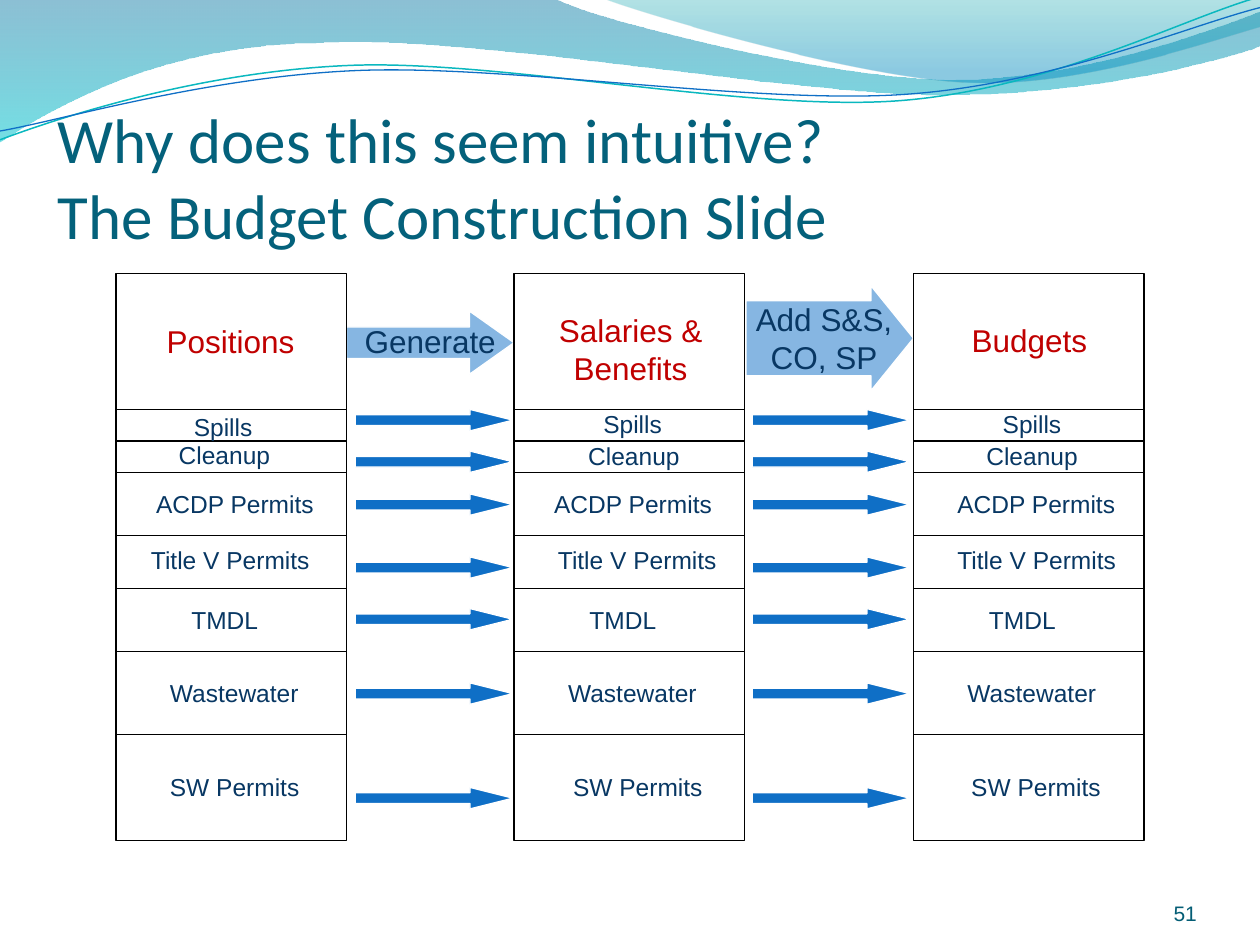
import math

import lxml.etree
import pptx
import pptx.dml.color
import pptx.enum.shapes
import pptx.enum.text
import pptx.oxml.ns
import pptx.util

Inches = pptx.util.Inches
RGBColor = pptx.dml.color.RGBColor
Shape = pptx.enum.shapes.MSO_SHAPE
Align = pptx.enum.text.PP_ALIGN
Anchor = pptx.enum.text.MSO_ANCHOR
AutoSize = pptx.enum.text.MSO_AUTO_SIZE
qn = pptx.oxml.ns.qn

COLORS = {
    "title": "04617B", "number": "045D75", "heading": "C00000", "label": "083763",
    "arrow": "0F6FC6", "border": "000000", "white": "FFFFFF",
    "wave_top": "0074A1", "wave_bottom": "00C6CF",
    "crest_top": "00A1A9", "crest_bottom": "008BBF", "ribbon": "0AB8BF",
}
COLORS = {name: RGBColor.from_string(value) for name, value in COLORS.items()}

presentation = pptx.Presentation()
presentation.slide_width, presentation.slide_height = Inches(10), Inches(7.5)
slide = presentation.slides.add_slide(presentation.slide_layouts[5])
shapes = slide.shapes


def write_text(text, box, shape=None, size=14, color="label", font="Arial", align=Align.LEFT,
               anchor=Anchor.TOP, margins=(0.1, 0.05, 0.1, 0.05), wrap=True,
               auto_size=AutoSize.SHAPE_TO_FIT_TEXT):
    """Write text in the given shape, or in a new text box, placed at box."""
    left, top, width, height = map(Inches, box)
    shape = shape or shapes.add_textbox(left, top, width, height)
    shape.left, shape.top, shape.width, shape.height = left, top, width, height
    frame = shape.text_frame
    frame.text = text
    frame.word_wrap = wrap
    frame.auto_size = auto_size
    frame.vertical_anchor = anchor
    (frame.margin_left, frame.margin_top,
     frame.margin_right, frame.margin_bottom) = map(Inches, margins)
    for paragraph in frame.paragraphs:
        paragraph.alignment = align
        for run in paragraph.runs:
            run.font.size = pptx.util.Pt(size)
            run.font.name = font
            run.font.color.rgb = COLORS[color]


def set_fill_opacity(shape, *percents):
    """Set the opacity of each fill colour in turn; call before the line is coloured."""
    for color, percent in zip(shape.element.xpath("./p:spPr//a:srgbClr"), percents):
        lxml.etree.SubElement(color, qn("a:alpha"), val=str(percent * 1000))


# Header waves: box, rotation, steps in slide inches, then gradient stops
# (colour, position, opacity) or a line (colour, width).
# A step of two numbers is a straight line, one of six is a Bezier curve.
waves = [
    ((-0.01, -0.01, 10.02, 1.14), 0,
     [(0, -0.01), (4.4, -0.01), (4.76, 0.17, 6.64, 0.63, 7.58, 0.63),
      (8.53, 0.63, 9.58, 0.26, 10, 0.09), (10.01, 0.36),
      (9.83, 0.44, 8.7, 0.76, 7.46, 0.75), (6.22, 0.75, 3.82, 0.28, 2.57, 0.34),
      (1.29, 0.35, 0.46, 0.83, -0.01, 1.13), (0, -0.01)],
     [("wave_top", 0, 45), ("wave_bottom", 1, 55)], None),
    ((4.79, -0.01, 5.21, 0.7), 0,
     [(4.79, -0.01), (5.09, 0.11, 6.82, 0.62, 7.69, 0.65),
      (8.56, 0.69, 9.61, 0.32, 10, 0.21), (10, 0), (4.79, -0.01)],
     [("crest_top", 0, 30), ("crest_bottom", 0.8, 45)], None),
    ((-0.02, 0.22, 10.02, 0.71), -2.7,
     [(0, 1.11), (0.48, 0.93, 1.58, 0.57, 2.77, 0.52),
      (3.95, 0.47, 5.93, 0.89, 7.13, 0.8), (8.33, 0.71, 9.38, 0.15, 9.98, -0.02)],
     None, ("ribbon", 0.85)),
    ((-0.02, 0.3, 10.03, 0.58), -2.7,
     [(0, 1.04), (0.47, 0.96, 1.64, 0.61, 2.83, 0.56),
      (4.03, 0.51, 5.97, 0.83, 7.17, 0.75), (8.36, 0.67, 9.41, 0.21, 10, 0.06)],
     None, ("arrow", 0.75)),
]
for (left, top, width, height), rotation, steps, stops, line in waves:
    ends = [(Inches(step[-2]), Inches(step[-1])) for step in steps]
    builder = shapes.build_freeform(*ends[0])
    builder.add_line_segments(ends[1:], close=stops is not None)
    wave = builder.convert_to_shape()
    wave.shadow.inherit = False
    wave.left, wave.top, wave.width, wave.height = map(Inches, (left, top, width, height))
    wave.rotation = rotation

    # Express every step in the unrotated box, with curves in place of lines.
    outline = wave.element.xpath(".//a:path")[0]
    outline.set("w", str(Inches(width)))
    outline.set("h", str(Inches(height)))
    cosine, sine = math.cos(math.radians(-rotation)), math.sin(math.radians(-rotation))
    for segment, step in zip(list(outline), steps):
        for point in list(segment):
            segment.remove(point)
        if len(step) == 6:
            segment.tag = qn("a:cubicBezTo")
        for x, y in zip(step[::2], step[1::2]):
            dx, dy = x - left - width / 2, y - top - height / 2
            lxml.etree.SubElement(segment, qn("a:pt"),
                                  x=str(Inches(width / 2 + dx * cosine - dy * sine)),
                                  y=str(Inches(height / 2 + dx * sine + dy * cosine)))
    if stops:
        wave.fill.gradient()
        wave.fill.gradient_angle = 270
        for gradient_stop, (color, position, _) in zip(wave.fill.gradient_stops, stops):
            gradient_stop.color.rgb = COLORS[color]
            gradient_stop.position = position
        set_fill_opacity(wave, *[opacity for _, _, opacity in stops])
        wave.line.fill.background()
    else:
        wave.fill.background()
        wave.line.color.rgb = COLORS[line[0]]
        wave.line.width = pptx.util.Pt(line[1])

# The title stands in front of the waves.
title = shapes.title
title.element.getparent().append(title.element)
write_text("Why does this seem intuitive?\vThe Budget Construction Slide", (0.46, 0.75, 9, 1.25),
           shape=title, size=36, color="title", font="Calibri", anchor=Anchor.BOTTOM,
           margins=(0, 0.05, 0, 0), auto_size=AutoSize.NONE)
write_text("51", (8.67, 6.95, 0.83, 0.4), size=12, color="number", align=Align.RIGHT,
           anchor=Anchor.BOTTOM, margins=(0, 0, 0, 0), auto_size=AutoSize.NONE)

# Arrows between the columns: box, head adjustments, opacity
arrows = [((5.92, 2.27, 1.33, 0.83), (0.718, 0.405), 50),
          ((2.75, 2.47, 1.33, 0.5), (0.5, 0.705), 50)]
arrows += [((left, top, 1.25, 0.17), (0.5, 2), 100)
           for left in (2.82, 5.97)
           for top in (3.25, 3.58, 3.92, 4.42, 4.83, 5.42, 6.25)]
for box, adjustments, opacity in arrows:
    arrow = shapes.add_shape(Shape.RIGHT_ARROW, *map(Inches, box))
    arrow.shadow.inherit = False
    arrow.adjustments[0], arrow.adjustments[1] = adjustments
    arrow.fill.solid()
    arrow.fill.fore_color.rgb = COLORS["arrow"]
    if opacity < 100:
        set_fill_opacity(arrow, opacity)
    arrow.line.color.rgb = COLORS["white"]
    arrow.line.width = pptx.util.Pt(0.75)

# Three columns with the same row dividers
COLUMN_WIDTH = 1.83
for left in (0.92, 4.08, 7.25):
    column = shapes.add_shape(Shape.RECTANGLE, Inches(left), Inches(2.17),
                              Inches(COLUMN_WIDTH), Inches(4.5))
    column.shadow.inherit = False
    column.fill.background()
    borders = [column]
    for y in (3.25, 3.5, 3.75, 4.25, 4.67, 5.17, 5.83):
        divider = shapes.add_connector(pptx.enum.shapes.MSO_CONNECTOR.STRAIGHT, Inches(left),
                                       Inches(y), Inches(left + COLUMN_WIDTH), Inches(y))
        lxml.etree.SubElement(divider.element.spPr, qn("a:effectLst"))
        borders.append(divider)
    for border in borders:
        border.line.color.rgb = COLORS["border"]
        border.line.width = pptx.util.Pt(0.75)

headings = [
    ("Positions", (1.08, 2.51, 1.5, 0.4), "heading"),
    ("Generate", (2.58, 2.51, 1.67, 0.4), "label"),
    ("Salaries & Benefits", (4.17, 2.42, 1.67, 0.71), "heading"),
    ("Add S&S,\nCO, SP", (5.75, 2.33, 1.58, 0.71), "label"),
    ("Budgets", (7.42, 2.5, 1.5, 0.4), "heading"),
]
for text, box, color in headings:
    write_text(text, box, size=18, color=color, align=Align.CENTER)

# Row labels: text, width, top and left edges in each column
rows = [
    ("Spills", 0.67, (3.22, 3.2, 3.2), (1.44, 4.69, 7.86)),
    ("Cleanup", 0.93, (3.44, 3.45, 3.45), (1.32, 4.57, 7.73)),
    ("ACDP Permits", 1.46, [3.83] * 3, (1.14, 4.3, 7.5)),
    ("Title V Permits", 1.47, [4.28] * 3, (1.1, 4.33, 7.5)),
    ("TMDL", 0.75, [4.75] * 3, (1.42, 4.58, 7.75)),
    ("Wastewater", 1.28, [5.33] * 3, (1.25, 4.41, 7.58)),
    ("SW Permits", 1.24, [6.08] * 3, (1.25, 4.45, 7.61)),
]
for text, width, tops, lefts in rows:
    for top, left in zip(tops, lefts):
        write_text(text, (left, top, width, 0.34), wrap=False)

presentation.save("out.pptx")
